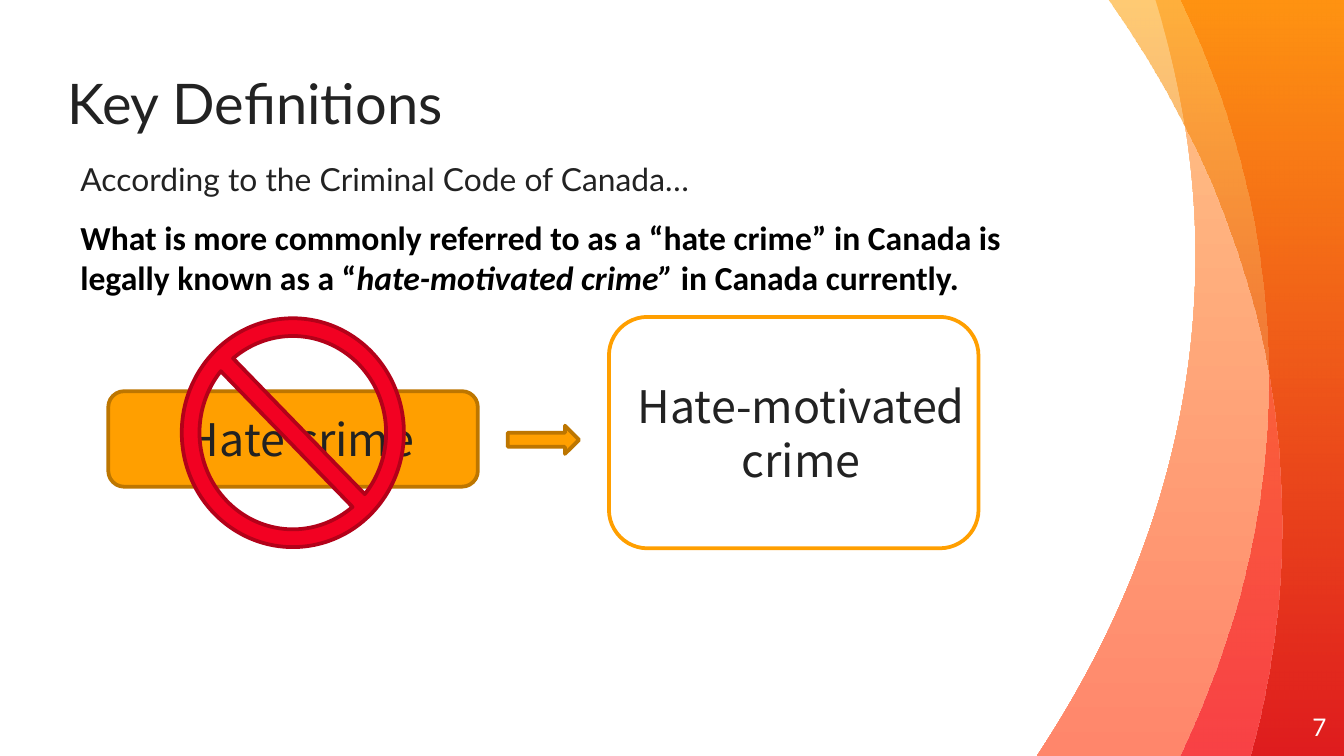
import pptx
import pptx.util
import pptx.dml.color
import pptx.enum.shapes
import pptx.enum.text
import pptx.oxml.ns
import lxml.etree

Pt = pptx.util.Pt
qn = pptx.oxml.ns.qn
SHAPES = pptx.enum.shapes.MSO_SHAPE
ALIGN = pptx.enum.text.PP_ALIGN
ANCHOR = pptx.enum.text.MSO_ANCHOR
WIDTH, HEIGHT = 720, 405
INK = "222222"
ORANGE, DARK_ORANGE = "FF9F00", "BD7600"
CJK = "Noto Sans CJK JP"


def colour(hex_string):
    return pptx.dml.color.RGBColor.from_string(hex_string)


def bend(shape, curves):
    """Turn the first segments, three at a time, into cubic curves."""
    segments = shape._element.spPr.findall(".//" + qn("a:lnTo"))
    for first in range(0, 3 * curves, 3):
        curve = lxml.etree.Element(qn("a:cubicBezTo"))
        segments[first].addprevious(curve)
        for segment in segments[first:first + 3]:
            curve.append(segment[0])
            segment.getparent().remove(segment)


def add_wave(slide, curved_edge, stops, angle):
    """Band between an edge of two curves and the right side of the slide."""
    outline = [*curved_edge, (WIDTH, 0), (WIDTH, HEIGHT)]
    points = [(Pt(x), Pt(y)) for x, y in outline]
    builder = slide.shapes.build_freeform(*points[0], scale=1.0)
    builder.add_line_segments(points[1:], close=True)
    wave = builder.convert_to_shape()
    bend(wave, 2)
    wave.shadow.inherit = False
    wave.line.fill.background()
    wave.fill.gradient()
    wave.fill.gradient_angle = angle
    for position, (hex_string, opacity) in enumerate(stops):
        stop = wave.fill.gradient_stops[position]
        stop.position = position
        stop.color.rgb = colour(hex_string)
        rgb = wave._element.spPr.findall(".//" + qn("a:srgbClr"))[position]
        lxml.etree.SubElement(rgb, qn("a:alpha"), val=str(opacity * 1000))


def style_run(run, font, size, hex_string, bold=False, italic=False):
    run.font.name = font
    run.font.size = Pt(size)
    run.font.color.rgb = colour(hex_string)
    run.font.bold = bold
    run.font.italic = italic


def set_frame(frame, margin, anchor):
    frame.word_wrap = True
    frame.vertical_anchor = anchor
    frame.margin_left = frame.margin_right = Pt(margin)
    frame.margin_top = frame.margin_bottom = Pt(margin)


def add_text(slide, box, text, size, hex_string, align=ALIGN.LEFT,
             margin=0, anchor=ANCHOR.MIDDLE):
    frame = slide.shapes.add_textbox(*map(Pt, box)).text_frame
    set_frame(frame, margin, anchor)
    frame.text = text
    frame.paragraphs[0].alignment = align
    style_run(frame.paragraphs[0].runs[0], "Lato", size, hex_string)
    return frame


def add_figure(slide, kind, box, fill, line):
    figure = slide.shapes.add_shape(kind, *map(Pt, box))
    figure.shadow.inherit = False
    figure.fill.solid()
    figure.fill.fore_color.rgb = colour(fill)
    figure.line.color.rgb = colour(line)
    figure.line.width = Pt(2)
    return figure


def add_term(slide, box, text, fill, line):
    """Rounded box holding one term."""
    frame = add_figure(slide, SHAPES.ROUNDED_RECTANGLE, box, fill, line).text_frame
    set_frame(frame, 0, ANCHOR.MIDDLE)
    frame.text = text
    paragraph = frame.paragraphs[0]
    paragraph.alignment = ALIGN.CENTER
    paragraph._p.get_or_add_pPr().set("marL", str(Pt(8)))
    style_run(paragraph.runs[0], CJK, 24, INK)


def add_waves(slide):
    add_wave(slide,
             ((555.5, HEIGHT), (609.8, 323), (640.5, 232.5), (640.5, 137),
              (640.5, 90), (632.6, 44), (619, 0)),
             (("FFC486", 100), ("FF866B", 100)), 270)
    add_wave(slide,
             ((632.2, HEIGHT), (662.4, 342), (679.4, 274), (679.4, 202.5),
              (679.4, 132), (663, 64), (632.2, 0)),
             (("F20122", 51), ("FF6A00", 71)), 90)
    add_wave(slide,
             ((669.6, HEIGHT), (681, 365), (686.7, 323), (686.7, 280.7),
              (686.7, 180.5), (653.8, 85.5), (594, 0)),
             (("FF9F00", 55), ("CC0000", 56)), 270)


def add_definition(slide):
    frame = add_text(slide, (36, 78.5, 549.4, 170.6),
                     "According to the Criminal Code of Canada…", 17, INK,
                     margin=7.2, anchor=ANCHOR.TOP)
    frame.paragraphs[0].space_before = Pt(6)
    frame.paragraphs[0].space_after = Pt(10)
    definition = frame.add_paragraph()
    parts = (("What is more commonly referred to as a “hate crime” in Canada is "
              "legally known as a “", False),
             ("hate-motivated crime”", True),
             (" in Canada currently.", False))
    for text, italic in parts:
        run = definition.add_run()
        run.text = text
        style_run(run, "Calibri", 18, "000000", bold=True, italic=italic)


def main():
    deck = pptx.Presentation()
    deck.slide_width, deck.slide_height = Pt(WIDTH), Pt(HEIGHT)
    slide = deck.slides.add_slide(deck.slide_layouts[6])

    # Background waves and page number
    add_waves(slide)
    add_text(slide, (667.4, 373.7, 43.2, 31), "7", 13, "FFFFFF", ALIGN.RIGHT)

    # Heading and definition
    add_text(slide, (36, 25.5, 549.4, 58.3), "Key Definitions", 30, INK)
    add_definition(slide)

    # Rejected term, arrow and legal term
    add_term(slide, (58, 209.6, 198, 51.2), "Hate crime", ORANGE, DARK_ORANGE)
    add_term(slide, (326.2, 169.8, 198, 124), "Hate-motivated crime", "FFFFFF", ORANGE)
    ban = add_figure(slide, SHAPES.NO_SYMBOL, (97.4, 170.5, 119, 122.6),
                     "F20122", "B30119")
    ban.adjustments[0] = 0.08
    arrow = add_figure(slide, SHAPES.DOWN_ARROW, (283.6, 216.5, 15.1, 38.2),
                       ORANGE, DARK_ORANGE)
    arrow.rotation = 270

    deck.save("out.pptx")


if __name__ == "__main__":
    main()
